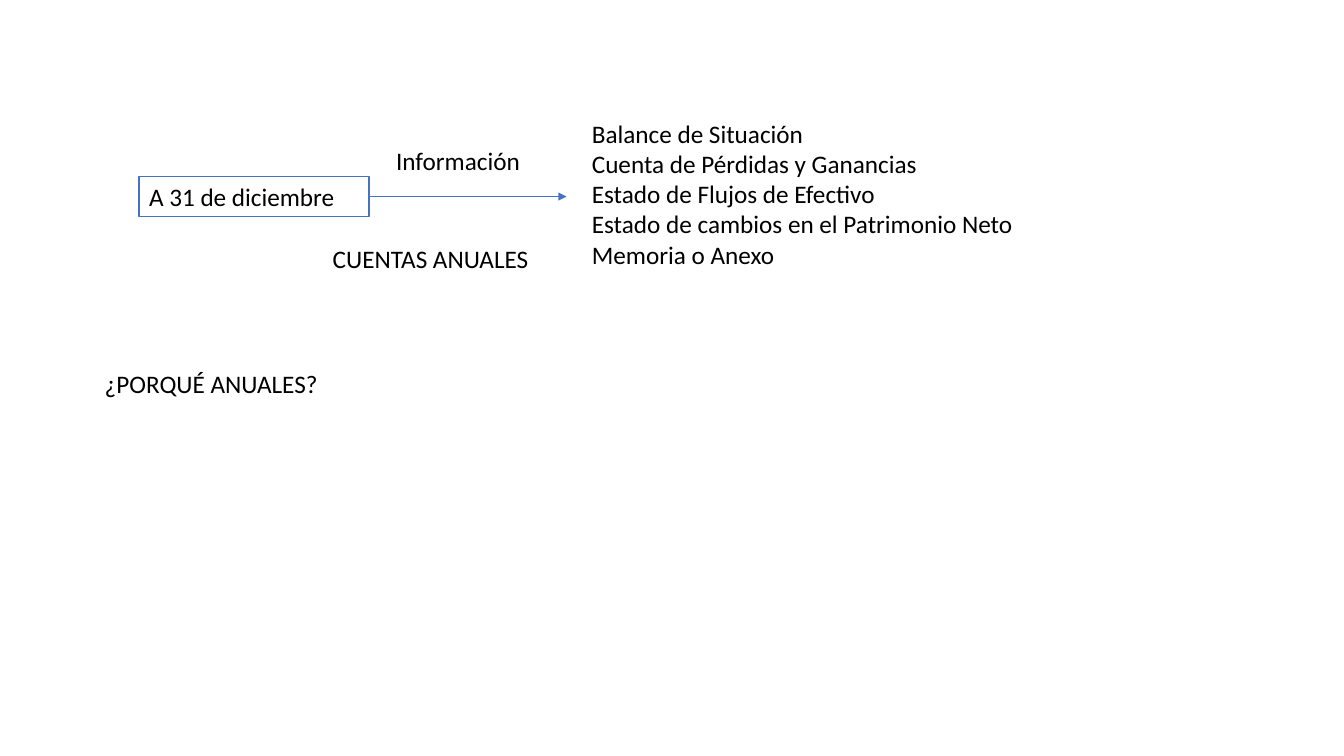
from dataclasses import dataclass

from lxml.etree import SubElement as Sub
from pptx import Presentation as Deck
from pptx.dml.color import RGBColor as Color
from pptx.enum.shapes import MSO_CONNECTOR as Link, MSO_SHAPE as Form
from pptx.enum.text import MSO_ANCHOR as Anchor, MSO_AUTO_SIZE as Fit, PP_ALIGN as Align
from pptx.oxml.ns import qn
from pptx.util import Inches, Pt


@dataclass(frozen=True)
class Theme:
    font: str = "Calibri"
    size: int = 18
    ink: str = "000000"
    paper: str = "FFFFFF"
    blue: str = "4472C4"
    edge: float = 1
    thin: float = 0.5


class Page:
    def __init__(self, slide, theme):
        self.slide, self.theme = slide, theme

    def apply(self, item, form):
        for name, value in form.items():
            setattr(item, name, value)

    def place(self, shape, left, top, width, height):
        names = ("left", "top", "width", "height")
        sizes = map(Inches, (left, top, width, height))
        self.apply(shape, dict(zip(names, sizes)))

    def letter(self, shape, lines):
        look = self.theme
        frame = shape.text_frame
        frame.text = "\n".join(lines)
        self.apply(frame, {"word_wrap": True, "auto_size": Fit.SHAPE_TO_FIT_TEXT,
                           "vertical_anchor": Anchor.TOP})
        for para in frame.paragraphs:
            self.apply(para, {"alignment": Align.LEFT, "space_before": Pt(0),
                              "line_spacing": 1.0})
            for run in para.runs:
                self.apply(run.font, {"name": look.font, "size": Pt(look.size)})
                run.font.color.rgb = Color.from_string(look.ink)

    def label(self, text, *area):
        shape = self.slide.shapes.add_textbox(*map(Inches, area))
        self.letter(shape, [text])

    def title(self, text, *area):
        shape = self.slide.shapes.title
        self.place(shape, *area)
        self.letter(shape, [text])

    def items(self, lines, *area):
        shape = self.slide.placeholders[1]
        self.place(shape, *area)
        self.letter(shape, lines)
        for para in shape.text_frame.paragraphs:
            props = para._p.get_or_add_pPr()
            props.set("marL", "0")
            props.set("indent", "0")
            Sub(props, qn("a:buNone"))

    def box(self, text, *area):
        look = self.theme
        shape = self.slide.shapes.add_shape(Form.RECTANGLE, *map(Inches, area))
        shape.shadow.inherit = False
        shape.fill.solid()
        shape.fill.fore_color.rgb = Color.from_string(look.paper)
        shape.line.color.rgb = Color.from_string(look.blue)
        shape.line.width = Pt(look.edge)
        self.letter(shape, [text])
        return shape

    def arrow(self, start, right):
        look = self.theme
        mid = start.top + start.height // 2
        link = self.slide.shapes.add_connector(
            Link.STRAIGHT, start.left + start.width, mid, Inches(right), mid)
        link.begin_connect(start, 3)
        link.line.color.rgb = Color.from_string(look.blue)
        link.line.width = Pt(look.thin)
        props = link._element.spPr
        Sub(props.find(qn("a:ln")), qn("a:tailEnd"), type="triangle")
        Sub(props, qn("a:effectLst"))


def main():
    deck = Deck()
    deck.slide_width, deck.slide_height = Inches(13.33), Inches(7.5)
    page = Page(deck.slides.add_slide(deck.slide_layouts[1]), Theme())

    # Closing date and the information it leads to
    date = page.box("A 31 de diciembre", 1.38, 1.75, 2.28, 0.4)
    page.arrow(date, 5.62)
    page.label("Información", 3.83, 1.39, 1.68, 0.4)

    # Annual accounts
    page.title("CUENTAS ANUALES", 3.2, 2.36, 2.42, 0.4)
    page.items(["Balance de Situación", "Cuenta de Pérdidas y Ganancias",
                "Estado de Flujos de Efectivo",
                "Estado de cambios en el Patrimonio Neto", "Memoria o Anexo"],
               5.77, 1.12, 5.96, 1.62)

    # Question
    page.label("¿PORQUÉ ANUALES?", 0.94, 3.61, 2.35, 0.4)

    deck.save("out.pptx")


if __name__ == "__main__":
    main()
